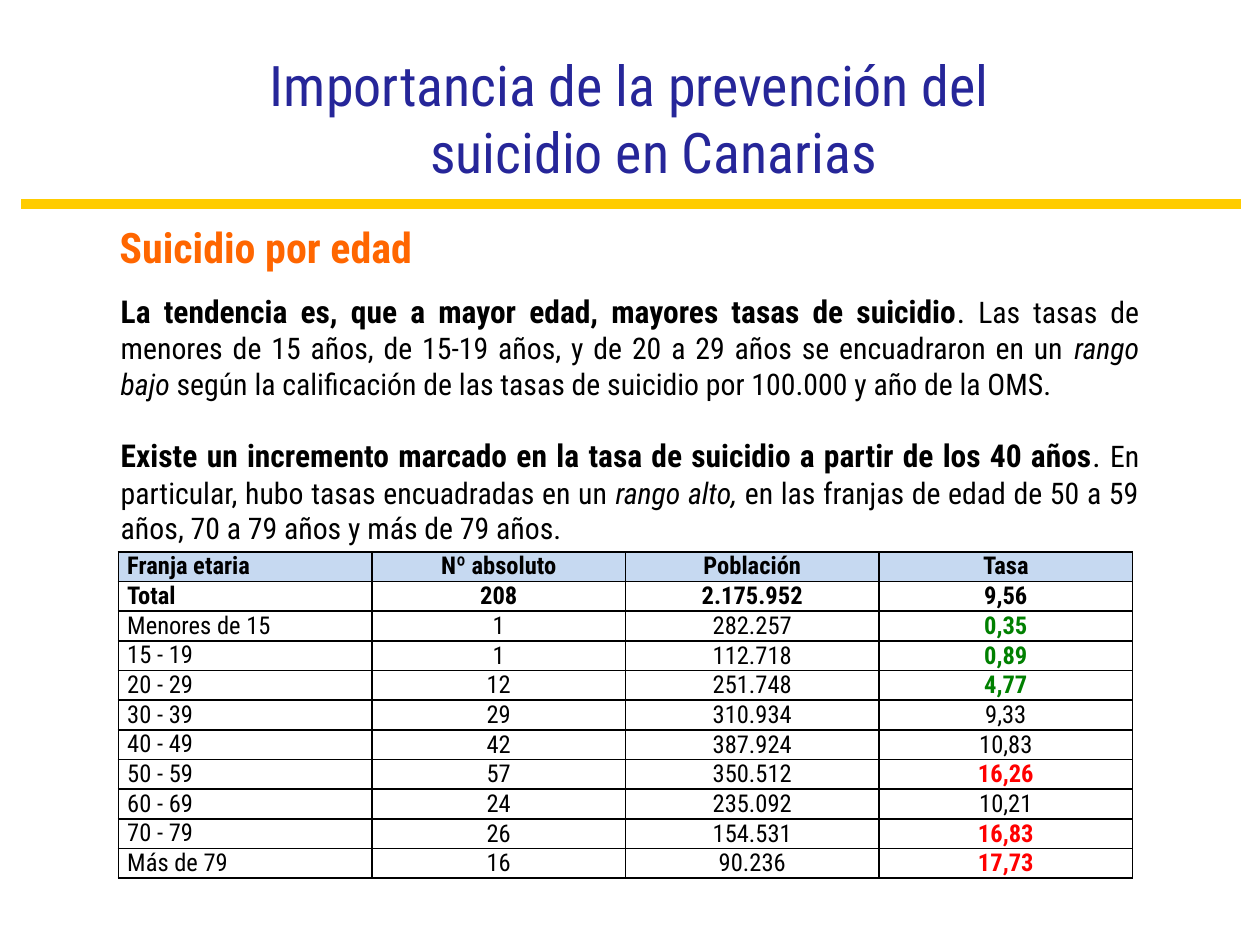
from lxml import etree
from pptx import Presentation
from pptx import util as u
from pptx.dml.color import RGBColor
from pptx.enum import shapes, text
from pptx.oxml import ns

FONT = "Roboto Condensed"
COLORS = {
    "title": "262699",
    "rule": "FFCC00",
    "heading": "FF6600",
    "text": "000000",
    "header": "C6D9F1",
    "low": "008000",
    "high": "FF0000",
}
ALIGN = text.PP_ALIGN

BODY = [
    [
        ("La tendencia es, que a mayor edad, mayores tasas de suicidio", {"size": 18, "bold": True}),
        (". ", {"size": 18}),
        ("Las tasas de menores de 15 años, de 15-19 años, y de 20 a 29 años "
         "se encuadraron en un ", {}),
        ("rango bajo ", {"italic": True}),
        ("según la calificación de las tasas de suicidio por 100.000 y año de la OMS. ", {}),
    ],
    [
        ("Existe un incremento marcado en la tasa de suicidio a partir de los 40 años",
         {"size": 18, "bold": True}),
        (". ", {"size": 18}),
        ("En particular, hubo tasas encuadradas en un ", {}),
        ("rango alto, ", {"italic": True}),
        ("en las franjas de edad de 50 a 59 años, 70 a 79 años y más de 79 años. ", {}),
    ],
]

RATES = [
    ("Franja etaria", "Nº absoluto", "Población", "Tasa"),
    ("Total", "208", "2.175.952", "9,56"),
    ("Menores de 15", "1", "282.257", "0,35"),
    ("15 - 19", "1", "112.718", "0,89"),
    ("20 - 29", "12", "251.748", "4,77"),
    ("30 - 39", "29", "310.934", "9,33"),
    ("40 - 49", "42", "387.924", "10,83"),
    ("50 - 59", "57", "350.512", "16,26"),
    ("60 - 69", "24", "235.092", "10,21"),
    ("70 - 79", "26", "154.531", "16,83"),
    ("Más de 79", "16", "90.236", "17,73"),
]
LOW_RATES = {"0,35", "0,89", "4,77"}
HIGH_RATES = {"16,26", "16,83", "17,73"}


def rgb(name):
    return RGBColor.from_string(COLORS[name])


def add_run(paragraph, wording, size, color="text", **style):
    run = paragraph.add_run()
    run.text = wording
    for key, value in {"name": FONT, "size": u.Pt(size), **style}.items():
        setattr(run.font, key, value)
    run.font.color.rgb = rgb(color)


def set_title(slide, wording):
    title = slide.shapes.title
    box = {"left": 2.11, "top": 0.31, "width": 5.78, "height": 1.25}
    for key, value in box.items():
        setattr(title, key, u.Inches(value))
    frame = title.text_frame
    for side in ("left", "top", "right", "bottom"):
        setattr(frame, f"margin_{side}", 0)
    frame.vertical_anchor = text.MSO_ANCHOR.MIDDLE
    frame.word_wrap = True
    frame.auto_size = text.MSO_AUTO_SIZE.NONE
    paragraph = frame.paragraphs[0]
    paragraph.alignment = ALIGN.CENTER
    hanging = u.Inches(0.38)
    properties = paragraph._p.get_or_add_pPr()
    properties.set("marL", str(hanging))
    properties.set("indent", str(-hanging))
    add_run(paragraph, wording, 32, "title")


def add_rule(slide):
    y = u.Inches(1.62)
    rule = slide.shapes.add_connector(
        shapes.MSO_CONNECTOR.STRAIGHT, u.Inches(0.17), y, u.Inches(9.85), y)
    rule.line.color.rgb = rgb("rule")
    rule.line.width = u.Pt(6)
    etree.SubElement(rule._element.spPr, ns.qn("a:effectLst"))


def add_text(slide, box, paragraphs, size, color="text", align=ALIGN.LEFT):
    frame = slide.shapes.add_textbox(*map(u.Inches, box)).text_frame
    frame.word_wrap = True
    for index, runs in enumerate(paragraphs):
        paragraph = frame.add_paragraph() if index else frame.paragraphs[0]
        paragraph.alignment = align
        if index:
            paragraph.space_before = u.Pt(20)
        for wording, style in runs:
            add_run(paragraph, wording, **{"size": size, "color": color, **style})


def add_borders(cell):
    properties = cell._tc.get_or_add_tcPr()
    for side in ("lnL", "lnR", "lnT", "lnB"):
        border = etree.SubElement(properties, ns.qn(f"a:{side}"), w=str(u.Pt(1)))
        fill = etree.SubElement(border, ns.qn("a:solidFill"))
        etree.SubElement(fill, ns.qn("a:srgbClr"), val=COLORS["text"])


def rate_color(wording):
    if wording in LOW_RATES:
        return "low"
    return "high" if wording in HIGH_RATES else "text"


def fill_cell(cell, wording, row, column):
    add_borders(cell)
    if row == 0:
        cell.fill.solid()
        cell.fill.fore_color.rgb = rgb("header")
    else:
        cell.fill.background()
    centered = row and column
    layout = {
        "margin_left": u.Inches(0.07),
        "margin_right": u.Inches(0.07),
        "margin_top": 0,
        "margin_bottom": 0,
        "vertical_anchor": text.MSO_ANCHOR.MIDDLE if centered else text.MSO_ANCHOR.TOP,
    }
    for key, value in layout.items():
        setattr(cell, key, value)
    paragraph = cell.text_frame.paragraphs[0]
    if column:
        paragraph.alignment = ALIGN.CENTER
    else:
        paragraph.alignment = ALIGN.JUSTIFY if row else ALIGN.LEFT
    color = rate_color(wording) if column == 3 else "text"
    add_run(paragraph, wording, 14, color, bold=row < 2 or color != "text")


def add_rates_table(slide):
    box = map(u.Inches, (0.94, 4.38, 8.05, 2.59))
    table = slide.shapes.add_table(len(RATES), len(RATES[0]), *box).table
    table.first_row = table.horz_banding = False
    for row, values in enumerate(RATES):
        for column, wording in enumerate(values):
            fill_cell(table.cell(row, column), wording, row, column)


def main():
    deck = Presentation()
    deck.slide_width, deck.slide_height = u.Inches(10), u.Inches(7.5)
    slide = deck.slides.add_slide(deck.slide_layouts.get_by_name("Title Only"))
    add_rule(slide)
    add_text(slide, (0.86, 2.27, 8.28, 2.14), BODY, 17, align=ALIGN.JUSTIFY)
    add_text(slide, (0.85, 1.71, 3.04, 0.5), [[("Suicidio por edad", {"bold": True})]],
             24, "heading")
    add_rates_table(slide)
    set_title(slide, "Importancia de la prevención del suicidio en Canarias")
    deck.save("out.pptx")


if __name__ == "__main__":
    main()
